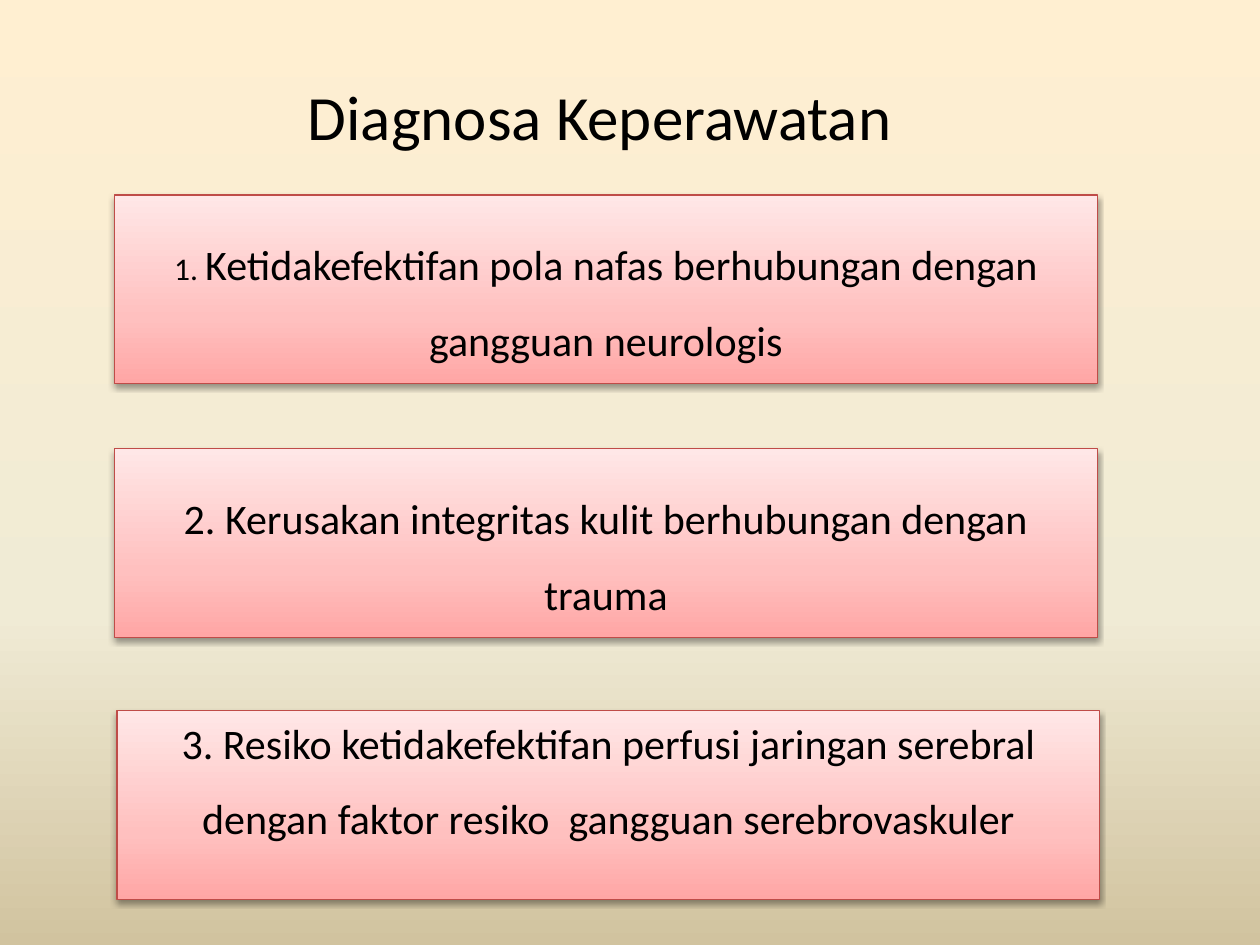
from dataclasses import dataclass

from lxml.etree import SubElement
from pptx import Presentation
from pptx.dml.color import RGBColor
from pptx.enum.shapes import MSO_SHAPE as Shape
from pptx.enum.text import MSO_ANCHOR as Anchor, PP_ALIGN as Align
from pptx.oxml.ns import qn
from pptx.util import Cm, Length, Pt


@dataclass(frozen=True)
class Gradient:
    angle: int
    stops: tuple[tuple[int, str], ...]


@dataclass(frozen=True)
class Theme:
    font: str = "Calibri"
    text: RGBColor = RGBColor(0x00, 0x00, 0x00)
    border: RGBColor = RGBColor(0xBF, 0x4C, 0x48)
    shadow: str = "000000"
    title_size: Length = Pt(36)
    body_size: Length = Pt(24)
    number_size: Length = Pt(18)
    background: Gradient = Gradient(
        90, ((0, "FFEFD1"), (65, "F0EBD5"), (100, "D1C39F")))
    box: Gradient = Gradient(
        270, ((0, "FFA6A5"), (35, "FFC0BF"), (100, "FFE7E7")))


@dataclass(frozen=True)
class Run:
    text: str
    size: Length


@dataclass(frozen=True)
class Diagnosis:
    left: Length
    top: Length
    runs: tuple[Run, ...]
    bottom_inset: Length = Cm(0.13)


THEME = Theme()
BOX_WIDTH, BOX_HEIGHT = Cm(19.81), Cm(3.81)
DIAGNOSES = (
    Diagnosis(Cm(2.31), Cm(3.93), (
        Run("1. ", THEME.number_size),
        Run("Ketidakefektifan pola nafas berhubungan dengan "
            "gangguan neurologis", THEME.body_size))),
    Diagnosis(Cm(2.31), Cm(9.04), (
        Run("2. Kerusakan integritas kulit berhubungan dengan trauma",
            THEME.body_size),)),
    Diagnosis(Cm(2.36), Cm(14.33), (
        Run("3. Resiko ketidakefektifan perfusi jaringan serebral "
            "dengan faktor resiko  gangguan serebrovaskuler",
            THEME.body_size),), bottom_inset=Cm(1.65)),
)


def apply_gradient(fill, owner, gradient: Gradient) -> None:
    """Give fill, which lies inside the XML element owner, any number of stops."""
    fill.gradient()
    grad = next(owner.iter(qn("a:gradFill")))
    for child in list(grad):
        grad.remove(child)
    stops = SubElement(grad, qn("a:gsLst"))
    for percent, color in gradient.stops:
        stop = SubElement(stops, qn("a:gs"), pos=str(percent * 1000))
        SubElement(stop, qn("a:srgbClr"), val=color)
    SubElement(grad, qn("a:lin"), ang=str(gradient.angle * 60000), scaled="0")


def add_shadow(s) -> None:
    s.shadow.inherit = False
    effects = s._element.spPr.find(qn("a:effectLst"))
    shadow = SubElement(effects, qn("a:outerShdw"), blurRad=str(Pt(3.1)),
                        dist=str(Pt(1.6)), dir=str(90 * 60000), rotWithShape="0")
    color = SubElement(shadow, qn("a:srgbClr"), val=THEME.shadow)
    SubElement(color, qn("a:alpha"), val="38000")


def write(s, runs: tuple[Run, ...], line_spacing: float = 1.0) -> None:
    tf = s.text_frame
    tf.word_wrap = True
    tf.vertical_anchor = Anchor.MIDDLE
    p = tf.paragraphs[0]
    p.alignment = Align.CENTER
    p.line_spacing = line_spacing
    for run in runs:
        r = p.add_run()
        r.text = run.text
        r.font.name = THEME.font
        r.font.size = run.size
        r.font.color.rgb = THEME.text


def add_diagnosis(slide, diagnosis: Diagnosis) -> None:
    s = slide.shapes.add_shape(Shape.RECTANGLE, diagnosis.left, diagnosis.top,
                               BOX_WIDTH, BOX_HEIGHT)
    apply_gradient(s.fill, s._element, THEME.box)
    s.line.color.rgb = THEME.border
    s.line.width = Pt(0.75)
    add_shadow(s)
    write(s, diagnosis.runs, line_spacing=1.5)
    s.text_frame.margin_bottom = diagnosis.bottom_inset


def main() -> None:
    prs = Presentation()
    prs.slide_width, prs.slide_height = Cm(25.4), Cm(19.05)
    slide = prs.slides.add_slide(prs.slide_layouts[6])
    apply_gradient(slide.background.fill, slide._element, THEME.background)
    title = slide.shapes.add_textbox(Cm(1.27), Cm(0.76), Cm(21.64), Cm(3.15))
    write(title, (Run("Diagnosa Keperawatan", THEME.title_size),))
    for diagnosis in DIAGNOSES:
        add_diagnosis(slide, diagnosis)
    prs.save("out.pptx")


if __name__ == "__main__":
    main()
